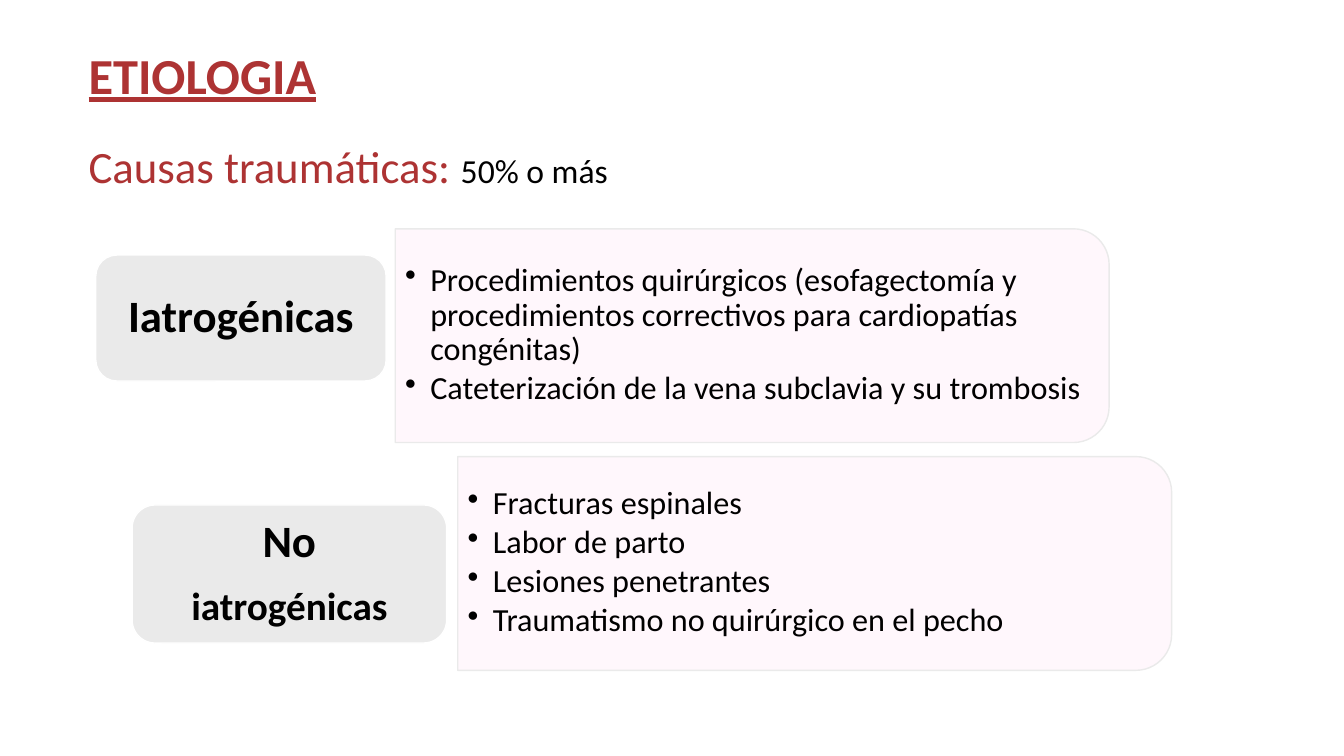
from dataclasses import dataclass

import lxml.etree
import pptx
import pptx.dml.color
import pptx.enum.shapes
import pptx.enum.text
import pptx.oxml.ns
import pptx.presentation
import pptx.shapes.autoshape
import pptx.slide
import pptx.text.text
import pptx.util

EMU_PER_PX = 9144
FONT = "Calibri"
COLORS = {
    "heading": "AD3333",
    "text": "000000",
    "panel": "FFF7FC",
    "label": "EAEAEA",
    "white": "FFFFFF",
}
PANEL_WIDTH, PANEL_HEIGHT = 708, 212
PANEL_TEXT_WIDTH, PANEL_TEXT_HEIGHT = 697, 191
BULLET_INDENT = 25


@dataclass(frozen=True)
class Box:
    left: int
    top: int
    width: int
    height: int


@dataclass(frozen=True)
class Cause:
    label: Box
    label_lines: tuple[str, ...]
    label_sizes: tuple[int, ...]
    panel_left: int
    panel_top: int
    examples: tuple[str, ...]


CAUSES = (
    Cause(
        Box(95, 253, 288, 125), ("Iatrogénicas",), (32,), 392, 227,
        (
            "Procedimientos quirúrgicos (esofagectomía y procedimientos "
            "correctivos para cardiopatías congénitas)",
            "Cateterización de la vena subclavia y su trombosis",
        ),
    ),
    Cause(
        Box(131, 501, 312, 137), ("No", "iatrogénicas"), (32, 28), 454, 453,
        (
            "Fracturas espinales",
            "Labor de parto",
            "Lesiones penetrantes",
            "Traumatismo no quirúrgico en el pecho",
        ),
    ),
)


def px(length: int) -> int:
    return length * EMU_PER_PX


def rgb(name: str) -> pptx.dml.color.RGBColor:
    return pptx.dml.color.RGBColor.from_string(COLORS[name])


def format_run(run: pptx.text.text._Run, size: int, color: str, bold: bool = False) -> None:
    run.font.name = FONT
    run.font.size = pptx.util.Pt(size)
    run.font.bold = bold
    run.font.color.rgb = rgb(color)


def add_text(slide: pptx.slide.Slide, box: Box, text: str) -> pptx.text.text.TextFrame:
    shape = slide.shapes.add_textbox(px(box.left), px(box.top), px(box.width), px(box.height))
    frame = shape.text_frame
    frame.word_wrap = True
    frame.text = text
    for paragraph in frame.paragraphs:
        paragraph.line_spacing = 0.9
    return frame


def add_shape(
    slide: pptx.slide.Slide,
    kind: pptx.enum.shapes.MSO_SHAPE,
    box: Box,
    fill: str,
    line: str,
) -> pptx.shapes.autoshape.Shape:
    shape = slide.shapes.add_shape(kind, px(box.left), px(box.top), px(box.width), px(box.height))
    shape.shadow.inherit = False
    shape.fill.solid()
    shape.fill.fore_color.rgb = rgb(fill)
    shape.line.color.rgb = rgb(line)
    shape.line.width = pptx.util.Pt(1)
    return shape


def add_bullet(paragraph: pptx.text.text._Paragraph) -> None:
    properties = paragraph._p.get_or_add_pPr()
    properties.set("marL", str(px(BULLET_INDENT)))
    properties.set("indent", str(-px(BULLET_INDENT)))
    bullet = lxml.etree.SubElement(properties, pptx.oxml.ns.qn("a:buChar"))
    bullet.set("char", "•")


def add_panel(slide: pptx.slide.Slide, cause: Cause) -> None:
    shift = (PANEL_WIDTH - PANEL_HEIGHT) // 2
    upright = Box(cause.panel_left + shift, cause.panel_top - shift, PANEL_HEIGHT, PANEL_WIDTH)
    kind = pptx.enum.shapes.MSO_SHAPE.ROUND_2_SAME_RECTANGLE
    add_shape(slide, kind, upright, "panel", "label").rotation = 90

    inset = (PANEL_HEIGHT - PANEL_TEXT_HEIGHT) // 2
    text_box = Box(cause.panel_left, cause.panel_top + inset, PANEL_TEXT_WIDTH, PANEL_TEXT_HEIGHT)
    frame = add_text(slide, text_box, "\n".join(cause.examples))
    frame.vertical_anchor = pptx.enum.text.MSO_ANCHOR.MIDDLE
    for paragraph in frame.paragraphs:
        add_bullet(paragraph)
        paragraph.space_after = pptx.util.Pt(3)
        format_run(paragraph.runs[0], 23, "text")


def add_label(slide: pptx.slide.Slide, cause: Cause) -> None:
    kind = pptx.enum.shapes.MSO_SHAPE.ROUNDED_RECTANGLE
    frame = add_shape(slide, kind, cause.label, "label", "white").text_frame
    frame.word_wrap = True
    frame.vertical_anchor = pptx.enum.text.MSO_ANCHOR.MIDDLE
    frame.text = "\n".join(cause.label_lines)
    for paragraph, size in zip(frame.paragraphs, cause.label_sizes):
        paragraph.alignment = pptx.enum.text.PP_ALIGN.CENTER
        paragraph.line_spacing = 0.9
        paragraph.space_after = pptx.util.Pt(14)
        format_run(paragraph.runs[0], size, "text", bold=True)


def add_headings(slide: pptx.slide.Slide) -> None:
    title = add_text(slide, Box(78, 46, 1150, 108), "ETIOLOGIA").paragraphs[0].runs[0]
    format_run(title, 36, "heading", bold=True)
    title.font.underline = True

    subtitle = add_text(slide, Box(78, 139, 1150, 108), "Causas traumáticas: ").paragraphs[0]
    format_run(subtitle.runs[0], 32, "heading")
    share = subtitle.add_run()
    share.text = "50% o más"
    format_run(share, 24, "text")


def build() -> pptx.presentation.Presentation:
    presentation = pptx.Presentation()
    presentation.slide_width = px(1333)
    presentation.slide_height = px(750)
    slide = presentation.slides.add_slide(presentation.slide_layouts[6])
    add_headings(slide)
    for cause in CAUSES:
        add_panel(slide, cause)
        add_label(slide, cause)
    return presentation


if __name__ == "__main__":
    build().save("out.pptx")
